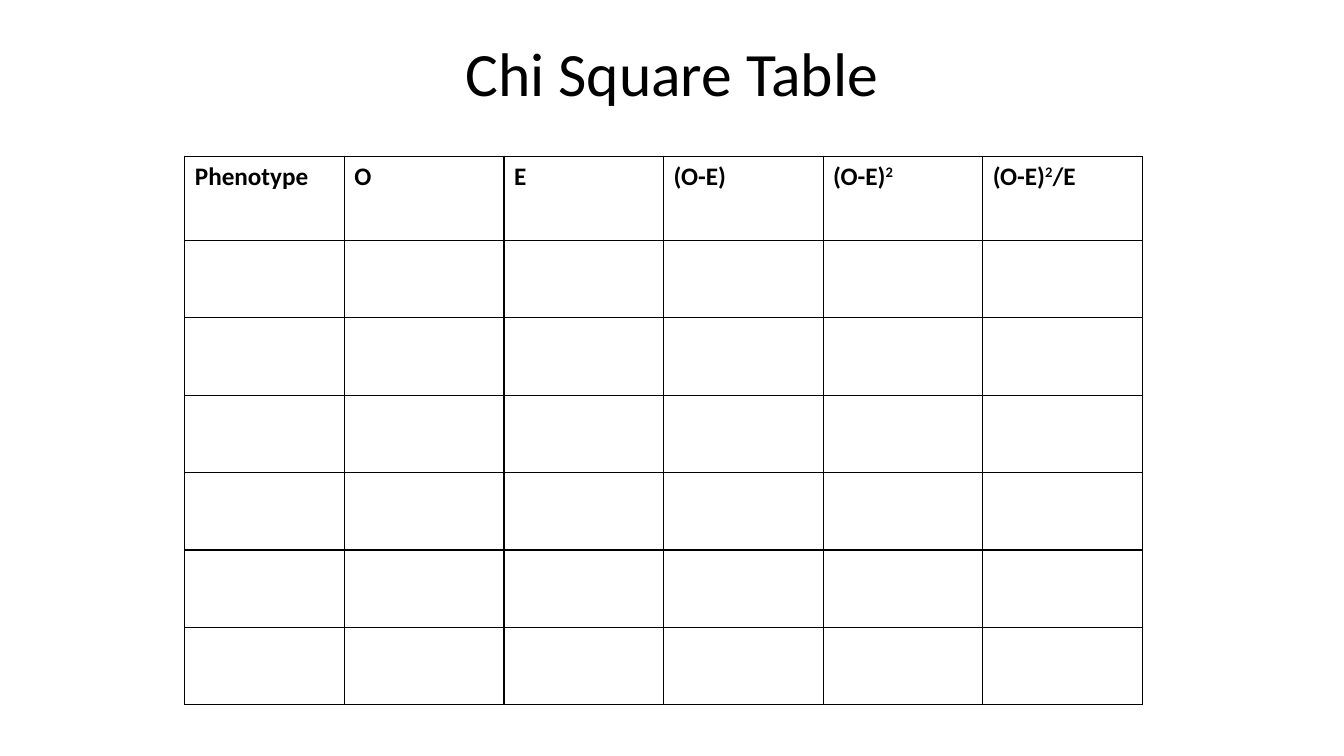
"""Build a slide with an empty chi square table."""
import lxml.etree
import pptx
import pptx.dml.color
import pptx.enum.text
import pptx.oxml.ns
import pptx.util

TITLE = "Chi Square Table"
HEADS = [
    [("Phenotype", False)],
    [("O", False)],
    [("E", False)],
    [("(O-E)", False)],
    [("(O-E)", False), ("2", True)],
    [("(O-E)", False), ("2", True), ("/E", False)],
]
BLANKS = 6

THEME = {"font": "Calibri", "ink": "000000", "paper": "FFFFFF",
         "title": 44, "head": 18, "line": 1, "raise": 30000}
SIZE = (960, 540)
TITLE_BOX = (156, 21.6, 648, 90)
LEFT, TOP = 132, 111.6
WIDTH, HEAD_HIGH, ROW_HIGH = 114, 60.2, 55.3

Pt = pptx.util.Pt
qn = pptx.oxml.ns.qn


def color(name):
    return pptx.dml.color.RGBColor.from_string(THEME[name])


def style(run, size, bold=False):
    run.font.name = THEME["font"]
    run.font.size = Pt(THEME[size])
    run.font.bold = bold
    run.font.color.rgb = color("ink")


def border(cell):
    props = cell._tc.get_or_add_tcPr()
    for spot, side in enumerate(("a:lnL", "a:lnR", "a:lnT", "a:lnB")):
        line = lxml.etree.Element(qn(side), w=str(Pt(THEME["line"])))
        fill = lxml.etree.SubElement(line, qn("a:solidFill"))
        lxml.etree.SubElement(fill, qn("a:srgbClr"), val=THEME["ink"])
        props.insert(spot, line)


def add_title(slide):
    box = slide.shapes.add_textbox(*map(Pt, TITLE_BOX))
    frame = box.text_frame
    frame.word_wrap = True
    frame.text = TITLE
    para = frame.paragraphs[0]
    para.alignment = pptx.enum.text.PP_ALIGN.CENTER
    style(para.runs[0], "title")


def add_grid(slide):
    highs = [HEAD_HIGH] + [ROW_HIGH] * BLANKS
    count = len(HEADS)
    table = slide.shapes.add_table(
        len(highs), count, Pt(LEFT), Pt(TOP),
        Pt(WIDTH * count), Pt(sum(highs))).table
    table.horz_banding = False
    for col in table.columns:
        col.width = Pt(WIDTH)
    for row, high in zip(table.rows, highs):
        row.height = Pt(high)
    for cell in table.iter_cells():
        cell.fill.solid()
        cell.fill.fore_color.rgb = color("paper")
        border(cell)
    for index, parts in enumerate(HEADS):
        para = table.cell(0, index).text_frame.paragraphs[0]
        for text, raised in parts:
            run = para.add_run()
            run.text = text
            style(run, "head", True)
            if raised:
                run._r.get_or_add_rPr().set("baseline", str(THEME["raise"]))


def main():
    deck = pptx.Presentation()
    deck.slide_width, deck.slide_height = map(Pt, SIZE)
    slide = deck.slides.add_slide(deck.slide_layouts[6])
    slide.background.fill.solid()
    slide.background.fill.fore_color.rgb = color("paper")
    add_title(slide)
    add_grid(slide)
    deck.save("out.pptx")


if __name__ == "__main__":
    main()
